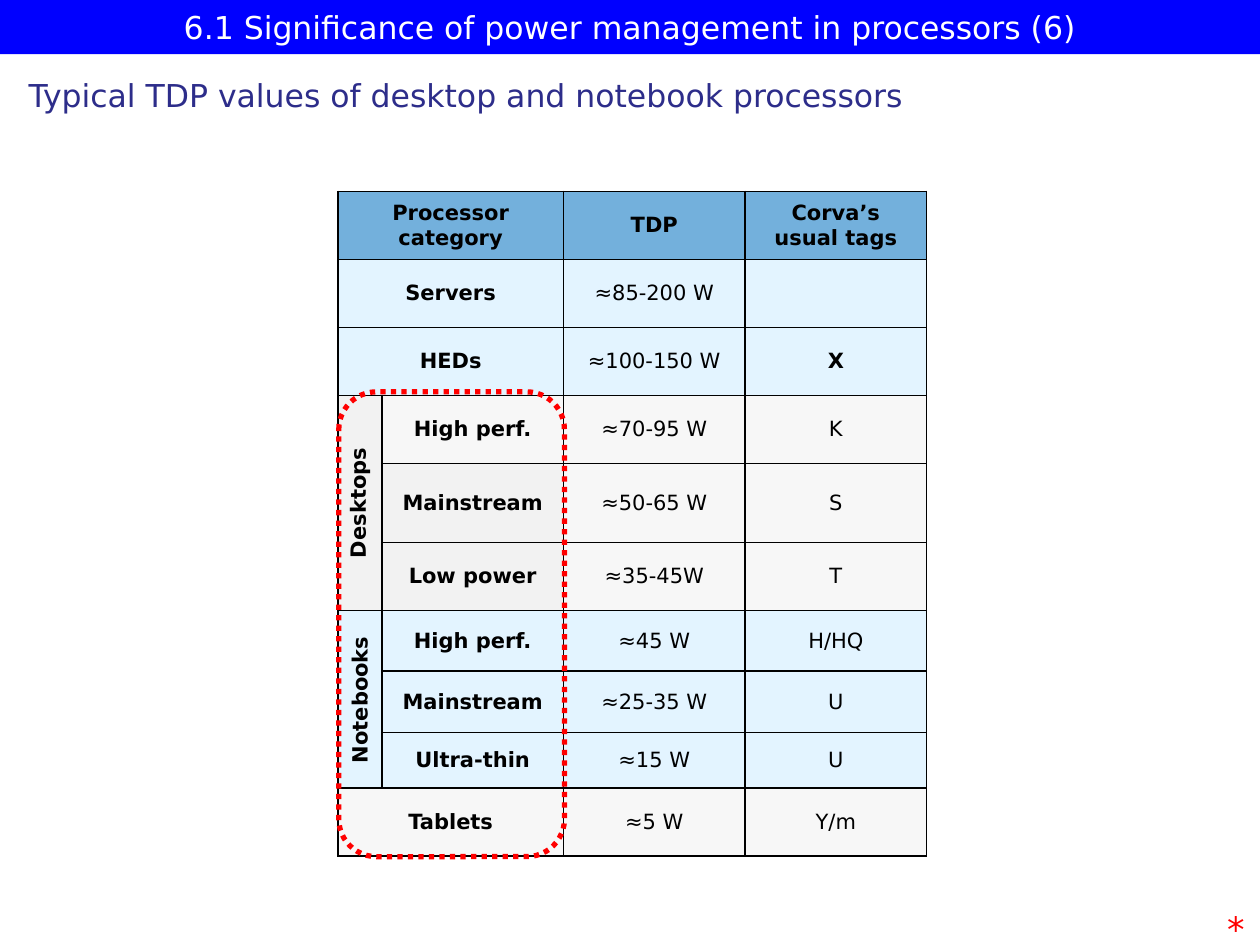
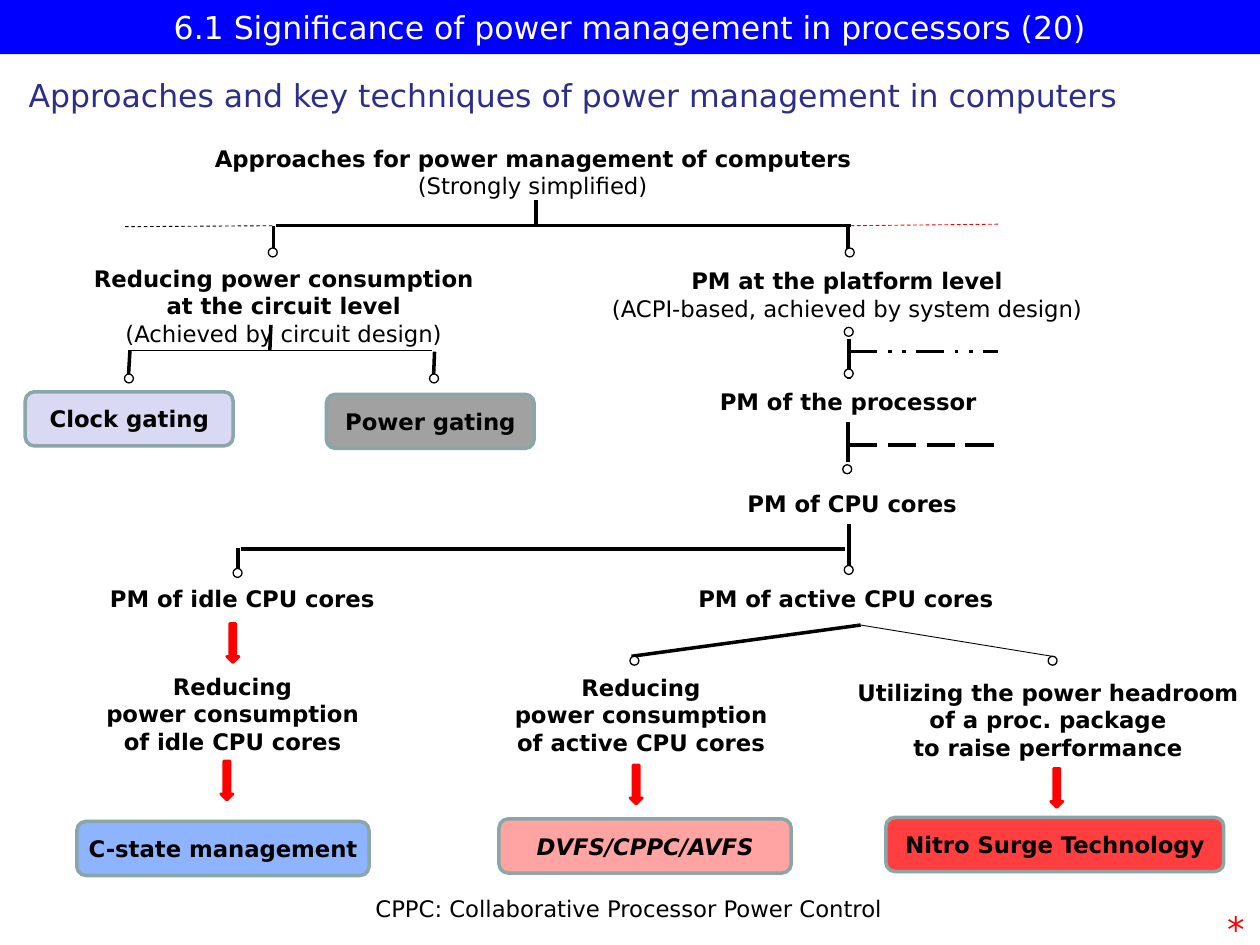
from dataclasses import dataclass
from typing import Any, NamedTuple, Optional

from lxml import etree
from pptx import Presentation
from pptx import util as u
from pptx.dml import color
from pptx.enum import dml, shapes, text
from pptx.oxml import ns

Cm, Pt = u.Cm, u.Pt
SHAPE = shapes.MSO_SHAPE
DASH = dml.MSO_LINE
ALIGN = text.PP_ALIGN
MIDDLE = text.MSO_ANCHOR.MIDDLE


@dataclass(frozen=True)
class Theme:
    font: str = "DejaVu Sans"
    black: str = "000000"
    white: str = "FFFFFF"
    red: str = "FF0000"
    band: str = "0000FF"
    heading: str = "2D2D8A"
    table_head: str = "0070C0"
    pale_blue: str = "CCECFF"
    pale_grey: str = "F2F2F2"
    box_edge: str = "8AA6A8"
    lavender: str = "D9D9F3"
    grey: str = "A1A1A1"
    sky: str = "8FB4FF"
    pink: str = "FFA3A3"
    scarlet: str = "FF3F3F"
    title_size: int = 18
    star_size: int = 20
    diagram_size: int = 13
    table_size: int = 12
    tint_alpha: int = 55000


THEME = Theme()


class Area(NamedTuple):
    left: float
    top: float
    width: float
    height: float

    def lengths(self) -> list[u.Length]:
        return [Cm(value) for value in self]


@dataclass(frozen=True)
class TextStyle:
    size: int
    ink: str = THEME.black
    bold: bool = False
    italic: bool = False
    align: Any = ALIGN.CENTER


@dataclass(frozen=True)
class ProcessorRow:
    category: str
    tdp: str
    tag: str
    height: float
    tint: str
    grouped: bool = False
    solid: bool = False
    bold_tag: bool = False


@dataclass(frozen=True)
class Topic:
    left: float
    top: float
    width: float
    heading: str
    remark: str = ""


@dataclass(frozen=True)
class Technique:
    left: float
    top: float
    width: float
    name: str
    tint: str
    italic: bool = False


class Branch(NamedTuple):
    x1: float
    y1: float
    x2: float
    y2: float
    weight: float = 0
    dash: Optional[Any] = None
    ink: str = THEME.black


DIAGRAM = TextStyle(THEME.diagram_size)
DIAGRAM_BOLD = TextStyle(THEME.diagram_size, bold=True)
TABLE = TextStyle(THEME.table_size)
TABLE_BOLD = TextStyle(THEME.table_size, bold=True)
HEADING = TextStyle(THEME.title_size, THEME.heading, align=ALIGN.LEFT)
TITLE = TextStyle(THEME.title_size, THEME.white)
STAR = TextStyle(THEME.star_size, THEME.red, align=ALIGN.LEFT)

BLUE, GREY = THEME.pale_blue, THEME.pale_grey
HEAD_ROW = ProcessorRow("Processor\ncategory", "TDP", "Corva’s\nusual tags", 1.37,
                        THEME.table_head, bold_tag=True)
PROCESSOR_ROWS = [
    HEAD_ROW,
    ProcessorRow("Servers", "≈85-200 W", "", 1.37, BLUE),
    ProcessorRow("HEDs", "≈100-150 W", "X", 1.37, BLUE, bold_tag=True),
    ProcessorRow("High perf.", "≈70-95 W", "K", 1.37, GREY, True),
    ProcessorRow("Mainstream", "≈50-65 W", "S", 1.6, GREY, True, True),
    ProcessorRow("Low power", "≈35-45W", "T", 1.37, GREY, True, True),
    ProcessorRow("High perf.", "≈45 W", "H/HQ", 1.22, BLUE, True),
    ProcessorRow("Mainstream", "≈25-35 W", "U", 1.24, BLUE, True),
    ProcessorRow("Ultra-thin", "≈15 W", "U", 1.12, BLUE, True),
    ProcessorRow("Tablets", "≈5 W", "Y/m", 1.37, GREY),
]
COLUMN_WIDTHS = [0.89, 3.66, 3.66, 3.66]
GROUP_STARTS = (3, 6)
GROUP_LABELS = [("Desktops", Area(5.84, 9.75, 2.74, 0.76)),
                ("Notebooks", Area(5.25, 13.26, 3.99, 0.76))]

TOPICS = [
    Topic(3.71, 2.79, 14.05, "Approaches for power management of computers", "(Strongly simplified)"),
    Topic(0.99, 5.21, 9.45, "Reducing power consumption\nat the circuit level",
          "(Achieved by circuit design)"),
    Topic(11.1, 5.26, 11.94, "PM at the platform level",
          "(ACPI-based, achieved by system design)"),
    Topic(13.69, 7.7, 6.81, "PM of the processor"),
    Topic(14.05, 9.75, 6.25, "PM of CPU cores"),
    Topic(1.96, 11.66, 5.84, "PM of idle CPU cores"),
    Topic(13.82, 11.66, 6.45, "PM of active CPU cores"),
    Topic(0.05, 13.44, 9.27, "Reducing\npower consumption\nof idle CPU cores"),
    Topic(9.91, 13.46, 6.02, "Reducing\npower consumption\nof active CPU cores"),
    Topic(16.84, 13.56, 8.56,
          "Utilizing the power headroom\nof a proc. package\nto raise performance"),
]
TECHNIQUES = [
    Technique(0.51, 7.9, 4.19, "Clock gating", THEME.lavender),
    Technique(6.58, 7.95, 4.19, "Power gating", THEME.grey),
    Technique(1.55, 16.56, 5.89, "C-state management", THEME.sky),
    Technique(10.06, 16.51, 5.89, "DVFS/CPPC/AVFS", THEME.pink, True),
    Technique(17.86, 16.48, 6.81, "Nitro Surge Technology", THEME.scarlet),
]
BRANCHES = [
    Branch(5.56, 4.55, 17.15, 4.55),
    Branch(10.8, 4.04, 10.8, 4.55),
    Branch(5.51, 4.55, 5.51, 5.05),
    Branch(17.09, 4.57, 17.09, 5.05),
    Branch(5.49, 4.55, 2.49, 4.57, 0.5, DASH.DASH),
    Branch(17.15, 4.55, 20.12, 4.52, 0.5, DASH.DASH, THEME.red),
    Branch(5.44, 7.06, 5.46, 6.55),
    Branch(2.62, 7.06, 8.71, 7.06, 0.5),
    Branch(2.62, 7.06, 2.59, 7.57),
    Branch(8.76, 7.09, 8.74, 7.59),
    Branch(17.12, 6.83, 17.12, 7.65),
    Branch(17.12, 7.09, 20.12, 7.09, dash=DASH.DASH_DOT_DOT),
    Branch(17.09, 8.51, 17.09, 9.32),
    Branch(17.12, 8.97, 20.12, 8.97, dash=DASH.LONG_DASH),
    Branch(17.12, 10.57, 17.12, 11.48),
    Branch(4.85, 11.07, 17.04, 11.07),
    Branch(4.8, 11.05, 4.8, 11.56),
    Branch(17.35, 12.6, 12.73, 13.23),
    Branch(17.35, 12.6, 21.21, 13.23, 0.5),
]
NODES = [(5.41, 5), (17.04, 5), (2.51, 7.54), (8.66, 7.54), (17.02, 6.6), (17.02, 7.44),
         (16.99, 9.37), (4.7, 11.46), (17.02, 11.4), (12.7, 13.23), (21.13, 13.23)]
ARROWS = [(4.57, 12.57), (4.45, 15.34), (12.7, 15.42), (21.18, 15.49)]


def assign(target: Any, values: dict[str, Any]) -> None:
    for name, value in values.items():
        setattr(target, name, value)


def rgb(value: str) -> color.RGBColor:
    return color.RGBColor.from_string(value)


def paint(fill: Any, ink: Optional[str]) -> None:
    if ink is None:
        fill.background()
    else:
        fill.solid()
        fill.fore_color.rgb = rgb(ink)


def stroke(line: Any, ink: str, weight: float, dash: Optional[Any] = None) -> None:
    paint(line.fill, ink)
    assign(line, {"width": Pt(weight), "dash_style": dash})


def write(frame: Any, lines: list[tuple[str, TextStyle]]) -> None:
    for index, (words, style) in enumerate(lines):
        paragraph = frame.add_paragraph() if index else frame.paragraphs[0]
        paragraph.alignment = style.align
        run = paragraph.add_run()
        run.text = words
        assign(run.font, {"name": THEME.font, "size": Pt(style.size),
                          "bold": style.bold, "italic": style.italic})
        run.font.color.rgb = rgb(style.ink)


def styled(words: str, style: TextStyle) -> list[tuple[str, TextStyle]]:
    return [(line, style) for line in words.split("\n") if line]


def add_label(slide: Any, area: Area, lines: list[tuple[str, TextStyle]],
              wrap: bool = True, turn: float = 0) -> None:
    label = slide.shapes.add_textbox(*area.lengths())
    label.rotation = turn
    label.text_frame.word_wrap = wrap
    write(label.text_frame, lines)


def add_figure(slide: Any, kind: Any, area: Area, fill: Optional[str], edge: str,
               weight: float, dash: Optional[Any] = None) -> Any:
    figure = slide.shapes.add_shape(kind, *area.lengths())
    figure.shadow.inherit = False
    paint(figure.fill, fill)
    stroke(figure.line, edge, weight, dash)
    return figure


def add_branch(slide: Any, branch: Branch) -> None:
    ends = [Cm(value) for value in branch[:4]]
    line = slide.shapes.add_connector(shapes.MSO_CONNECTOR.STRAIGHT, *ends)
    stroke(line.line, branch.ink, branch.weight, branch.dash)
    etree.SubElement(line._element.spPr, ns.qn("a:effectLst"))


def start_slide(deck: Any, number: int, heading: str) -> Any:
    slide = deck.slides.add_slide(deck.slide_layouts[5])
    title = slide.shapes.title
    band = Area(0, 0, 25.4, 1.09)
    assign(title, dict(zip(band._fields, band.lengths())))
    paint(title.fill, THEME.band)
    assign(title.text_frame, {"vertical_anchor": MIDDLE, "word_wrap": True,
                              "auto_size": text.MSO_AUTO_SIZE.NONE})
    write(title.text_frame,
          [(f"6.1 Significance of power management in processors ({number})", TITLE)])
    add_label(slide, Area(0.33, 1.4, 24.18, 1.02), [(heading, HEADING)])
    add_label(slide, Area(24.49, 18.16, 0.91, 1.12), [("*", STAR)])
    return slide


def format_cell(cell: Any, words: str, style: TextStyle, tint: str, solid: bool) -> None:
    write(cell.text_frame, styled(words, style))
    cell.vertical_anchor = MIDDLE
    properties = cell._tc.get_or_add_tcPr()
    for side in ("lnL", "lnR", "lnT", "lnB"):
        border = etree.SubElement(properties, ns.qn(f"a:{side}"), w=str(Pt(1)))
        ink = etree.SubElement(border, ns.qn("a:solidFill"))
        etree.SubElement(ink, ns.qn("a:srgbClr"), val=THEME.black)
    paint(cell.fill, tint)
    if not solid:
        tone = properties.find(ns.qn("a:solidFill")).find(ns.qn("a:srgbClr"))
        etree.SubElement(tone, ns.qn("a:alpha"), val=str(THEME.tint_alpha))


def add_tdp_table(slide: Any) -> None:
    area = Area(6.81, 3.86, sum(COLUMN_WIDTHS), sum(row.height for row in PROCESSOR_ROWS))
    table = slide.shapes.add_table(len(PROCESSOR_ROWS), len(COLUMN_WIDTHS),
                                   *area.lengths()).table
    assign(table, {"first_row": False, "horz_banding": False})
    for column, width in zip(table.columns, COLUMN_WIDTHS):
        column.width = Cm(width)
    for index, row in enumerate(PROCESSOR_ROWS):
        table.rows[index].height = Cm(row.height)
        names = ["", row.category] if row.grouped else [row.category, ""]
        tdp_style = TABLE_BOLD if row is HEAD_ROW else TABLE
        tag_style = TABLE_BOLD if row.bold_tag else TABLE
        styles = [TABLE_BOLD, TABLE_BOLD, tdp_style, tag_style]
        for column, words in enumerate([*names, row.tdp, row.tag]):
            solid = column < 2 and (row.solid or (column == 0 and row.grouped and row.tint == GREY))
            format_cell(table.cell(index, column), words, styles[column], row.tint, solid)
        if not row.grouped:
            table.cell(index, 0).merge(table.cell(index, 1))
    for start in GROUP_STARTS:
        table.cell(start, 0).merge(table.cell(start + 2, 0))


def build_tdp_slide(deck: Any) -> None:
    slide = start_slide(deck, 6, "Typical TDP values of desktop and notebook processors")
    add_tdp_table(slide)
    left_bold = TextStyle(THEME.table_size, bold=True, align=ALIGN.LEFT)
    for name, area in GROUP_LABELS:
        add_label(slide, area, [(name, left_bold)], turn=270)
    add_figure(slide, SHAPE.ROUNDED_RECTANGLE, Area(6.83, 7.9, 4.55, 9.37), None,
               THEME.red, 3, DASH.ROUND_DOT)


def build_approaches_slide(deck: Any) -> None:
    slide = start_slide(deck, 20,
                        "Approaches and key techniques of power management in computers")
    for branch in BRANCHES:
        add_branch(slide, branch)
    for left, top in NODES:
        add_figure(slide, SHAPE.OVAL, Area(left, top, 0.18, 0.18), THEME.white, THEME.black, 0)
    for left, top in ARROWS:
        add_figure(slide, SHAPE.DOWN_ARROW, Area(left, top, 0.25, 0.79), THEME.red, THEME.red, 1.5)
    for topic in TOPICS:
        lines = styled(topic.heading, DIAGRAM_BOLD) + styled(topic.remark, DIAGRAM)
        height = 0.81 + 0.56 * (len(lines) - 1)
        add_label(slide, Area(topic.left, topic.top, topic.width, height), lines, wrap=False)
    for technique in TECHNIQUES:
        area = Area(technique.left, technique.top, technique.width, 1.09)
        box = add_figure(slide, SHAPE.ROUNDED_RECTANGLE, area, technique.tint, THEME.box_edge, 2)
        assign(box.text_frame, {"word_wrap": False, "vertical_anchor": MIDDLE})
        style = TextStyle(THEME.diagram_size, bold=True, italic=technique.italic)
        write(box.text_frame, [(technique.name, style)])
    note = TextStyle(THEME.diagram_size, align=ALIGN.LEFT)
    add_label(slide, Area(7.32, 17.91, 10.95, 0.81),
              [("CPPC: Collaborative Processor Power Control", note)])


def main() -> None:
    deck = Presentation()
    assign(deck, {"slide_width": Cm(25.4), "slide_height": Cm(19.05)})
    build_tdp_slide(deck)
    build_approaches_slide(deck)
    deck.save("out.pptx")


if __name__ == "__main__":
    main()
